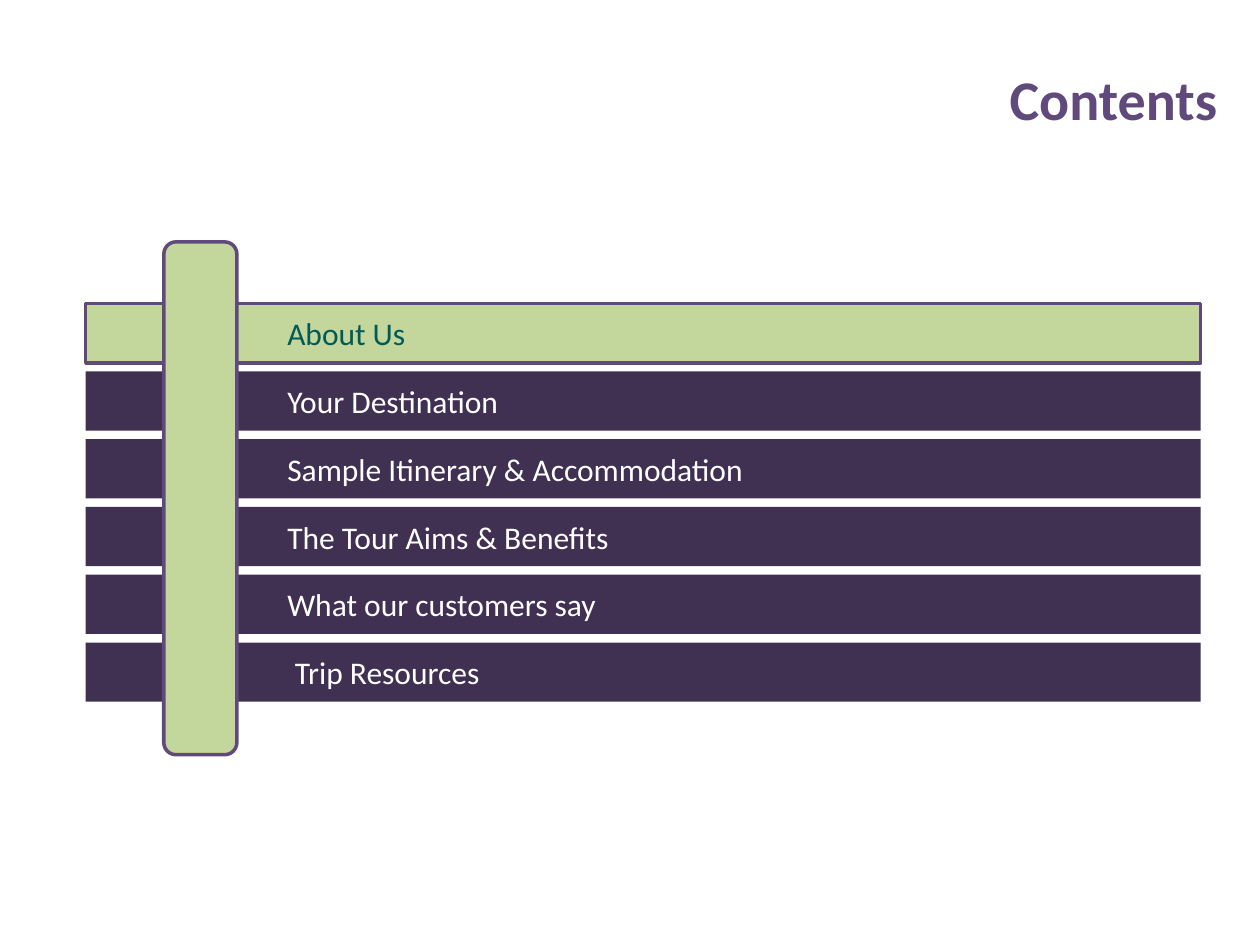
import pptx
import pptx.util
import pptx.dml.color
import pptx.enum.shapes
import pptx.enum.text

Inches, Pt = pptx.util.Inches, pptx.util.Pt
RGB = pptx.dml.color.RGBColor.from_string
SHAPE = pptx.enum.shapes.MSO_SHAPE
ALIGN = pptx.enum.text.PP_ALIGN
COLORS = {"purple": "604A7B", "dark": "403152", "green": "C3D69B",
          "teal": "005A58", "white": "FFFFFF"}
ITEMS = ["About Us", "Your Destination", "Sample Itinerary & Accommodation",
         "The Tour Aims & Benefits", "What our customers say", "Trip Resources"]
LEFT, TOP, WIDTH, HEIGHT, PITCH = 0.68, 2.41, 8.85, 0.47, 0.538
INDENT, LAST_INDENT = 1.6, 1.66


def add_block(kind, box, fill, outline=None):
    s = slide.shapes.add_shape(kind, *map(Inches, box))
    s.shadow.inherit = False
    s.fill.solid()
    s.fill.fore_color.rgb = RGB(COLORS[fill])
    if outline:
        s.line.color.rgb = RGB(COLORS[outline])
        s.line.width = Pt(2)
    else:
        s.line.fill.background()
    return s


def write(tf, text, size, color, align, bold=False):
    tf.word_wrap = True
    p = tf.paragraphs[0]
    p.text = text
    p.alignment = align
    p.font.name = "Calibri"
    p.font.size = Pt(size)
    p.font.bold = bold
    p.font.color.rgb = RGB(COLORS[color])


prs = pptx.Presentation()
prs.slide_width, prs.slide_height = Inches(10), Inches(7.5)
slide = prs.slides.add_slide(prs.slide_layouts[6])

# Title
title = slide.shapes.add_textbox(*map(Inches, (4.43, 0.46, 5.33, 0.64)))
write(title.text_frame, "Contents", 32, "purple", ALIGN.RIGHT, bold=True)

# Contents bars, the first one highlighted
for row, item in enumerate(ITEMS):
    current = row == 0
    s = add_block(SHAPE.RECTANGLE, (LEFT, TOP + row * PITCH, WIDTH, HEIGHT),
                  "green" if current else "dark", "purple" if current else None)
    tf = s.text_frame
    tf.margin_left = Inches(LAST_INDENT if item == ITEMS[-1] else INDENT)
    tf.vertical_anchor = pptx.enum.text.MSO_ANCHOR.MIDDLE
    write(tf, item, 18, "teal" if current else "white", ALIGN.LEFT)

# Upright band across the bars
add_block(SHAPE.ROUNDED_RECTANGLE, (1.3, 1.92, 0.58, 4.07), "green", "purple")

prs.save("out.pptx")
